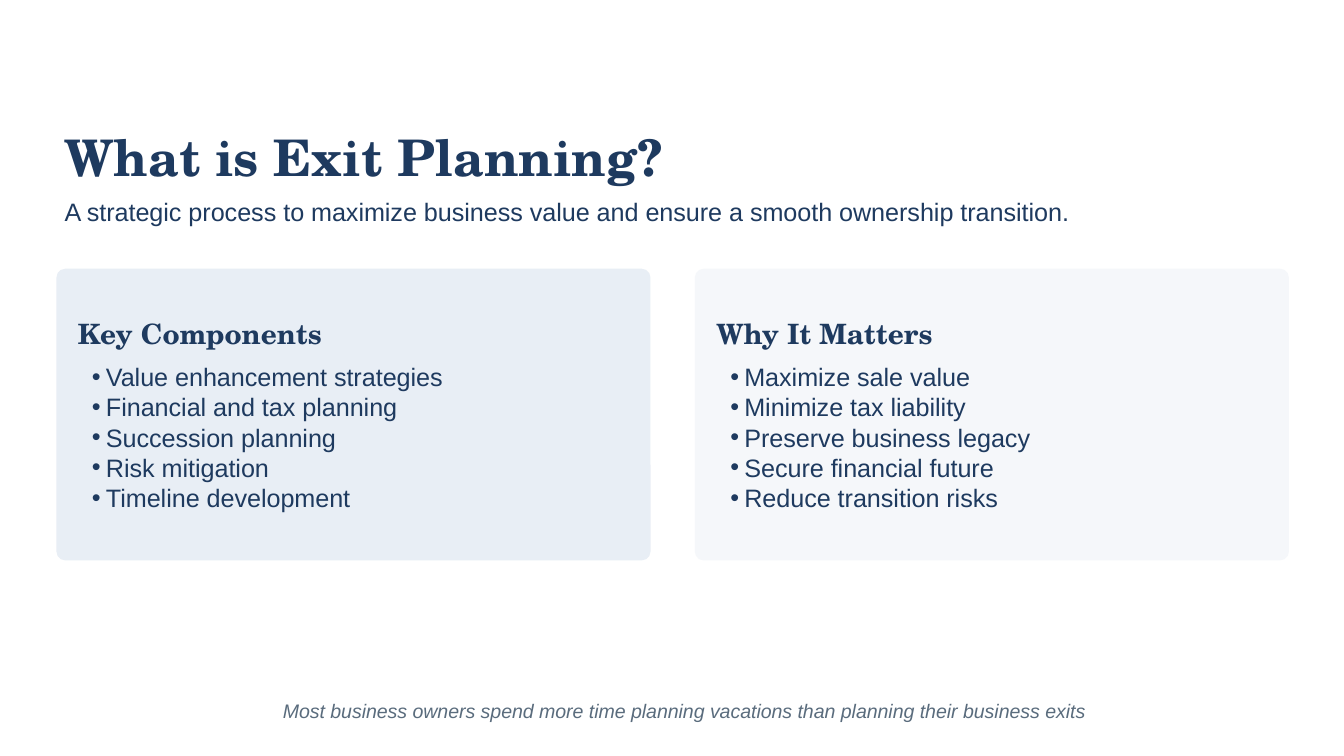
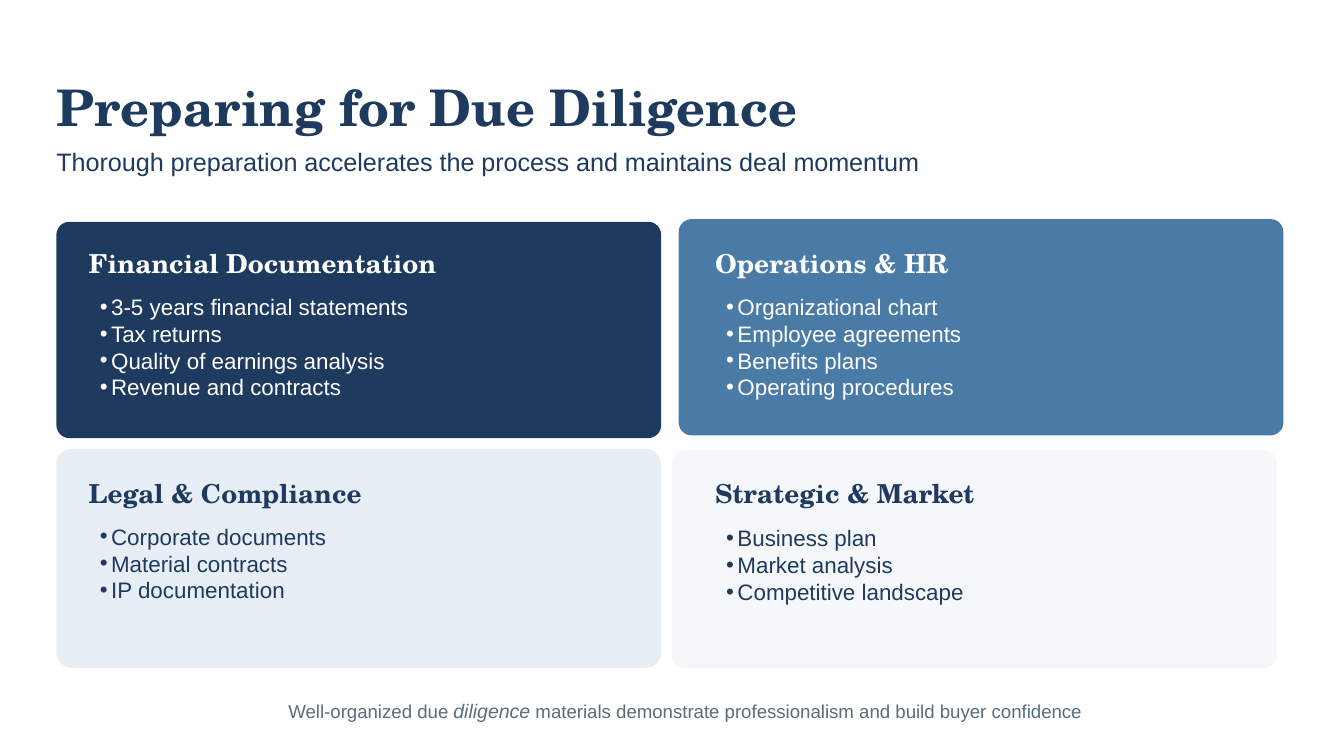
import dataclasses

import pptx
import pptx.dml.color
import pptx.enum.shapes
import pptx.enum.text
import pptx.oxml.ns
import pptx.util
from lxml import etree

Inches = pptx.util.Inches


@dataclasses.dataclass(frozen=True)
class Theme:
    """Colours, fonts and type sizes of the deck."""
    navy: str = "1E3A5F"
    blue: str = "4A7BA7"
    mist: str = "E8EEF5"
    pale: str = "F5F7FA"
    white: str = "FFFFFF"
    grey: str = "5A6C7D"
    serif: str = "TeX Gyre Schola"
    sans: str = "Arial"
    title_size: float = 27
    subtitle_size: float = 13.5
    footer_size: float = 10.5
    small_footer_size: float = 10


THEME = Theme()


@dataclasses.dataclass(frozen=True)
class Box:
    """A rectangle in inches."""
    left: float
    top: float
    width: float
    height: float

    def inner(self, left, top, width, height):
        """Return a box placed relative to this one."""
        return Box(self.left + left, self.top + top, width, height)

    def lengths(self):
        """Return left, top, width and height as lengths."""
        return [Inches(value) for value in dataclasses.astuple(self)]


@dataclasses.dataclass(frozen=True)
class PanelStyle:
    """Type settings, in points, of a heading with a bulleted list."""
    heading_size: float
    heading_leading: float
    heading_after: float
    list_size: float
    indent: float


@dataclasses.dataclass(frozen=True)
class Panel:
    """A card, with its list box relative to its heading box."""
    card: Box
    radius: float
    fill: str
    ink: str
    heading_box: Box
    heading: str
    list_box: tuple
    items: tuple


WIDE_STYLE = PanelStyle(15, 21, 6, 13.5, 7.5)
GRID_STYLE = PanelStyle(14, 13.5, 4.5, 12, 6)


def set_frame(shape, left_inset=0):
    """Give a text shape plain insets, wrapping and top alignment."""
    frame = shape.text_frame
    frame.margin_left = pptx.util.Pt(left_inset)
    frame.margin_top = frame.margin_right = frame.margin_bottom = 0
    frame.auto_size = pptx.enum.text.MSO_AUTO_SIZE.NONE
    frame.word_wrap = True
    frame.vertical_anchor = pptx.enum.text.MSO_ANCHOR.TOP
    return frame


def add_text_box(slide, box):
    """Add an empty text box and return its frame."""
    return set_frame(slide.shapes.add_textbox(*box.lengths()))


def place_placeholder(placeholder, box, left_inset=0):
    """Move a placeholder to a box, in front of earlier shapes."""
    placeholder.left, placeholder.top, placeholder.width, placeholder.height = box.lengths()
    placeholder.element.getparent().append(placeholder.element)
    return set_frame(placeholder, left_inset)


def format_paragraph(paragraph, leading=1.0, after=0, align=pptx.enum.text.PP_ALIGN.LEFT):
    """Set alignment and spacing of a paragraph."""
    paragraph.alignment = align
    paragraph.line_spacing = leading
    paragraph.space_before = pptx.util.Pt(0)
    paragraph.space_after = pptx.util.Pt(after)


def add_run(paragraph, text, size, color, name=THEME.sans, bold=False, italic=False):
    """Add one formatted run."""
    run = paragraph.add_run()
    run.text = text
    run.font.name = name
    run.font.size = pptx.util.Pt(size)
    run.font.bold = bold
    run.font.italic = italic
    run.font.color.rgb = pptx.dml.color.RGBColor.from_string(color)


def add_bullet(paragraph, indent):
    """Give a paragraph a hanging bullet."""
    properties = paragraph._p.get_or_add_pPr()
    properties.set("marL", str(pptx.util.Pt(indent)))
    properties.set("indent", str(-pptx.util.Pt(indent)))
    bullet = etree.SubElement(properties, pptx.oxml.ns.qn("a:buChar"))
    bullet.set("char", "•")


def add_header(slide, box, title_width, title, subtitle):
    """Fill the title and add the subtitle beneath it."""
    frame = place_placeholder(slide.shapes.title, box.inner(0, 0, title_width, 0.42))
    paragraph = frame.paragraphs[0]
    format_paragraph(paragraph, pptx.util.Pt(30), 6)
    add_run(paragraph, title, THEME.title_size, THEME.navy, THEME.serif, bold=True)
    paragraph = add_text_box(slide, box.inner(0, 0.42, box.width, 0.29)).paragraphs[0]
    format_paragraph(paragraph, pptx.util.Pt(21), 9)
    add_run(paragraph, subtitle, THEME.subtitle_size, THEME.navy)


def add_card(slide, box, radius, fill):
    """Add a plain rounded card."""
    card = slide.shapes.add_shape(
        pptx.enum.shapes.MSO_SHAPE.ROUNDED_RECTANGLE, *box.lengths())
    card.adjustments[0] = radius
    card.shadow.inherit = False
    card.fill.solid()
    card.fill.fore_color.rgb = pptx.dml.color.RGBColor.from_string(fill)
    card.line.fill.background()


def add_panel(slide, placeholder, panel, style):
    """Add a card with its heading and bulleted list."""
    add_card(slide, panel.card, panel.radius, panel.fill)
    heading = add_text_box(slide, panel.heading_box).paragraphs[0]
    format_paragraph(heading, pptx.util.Pt(style.heading_leading), style.heading_after)
    add_run(heading, panel.heading, style.heading_size, panel.ink, THEME.serif, bold=True)
    frame = place_placeholder(
        placeholder, panel.heading_box.inner(*panel.list_box), style.indent)
    for index, item in enumerate(panel.items):
        paragraph = frame.add_paragraph() if index else frame.paragraphs[0]
        add_bullet(paragraph, style.indent)
        format_paragraph(paragraph)
        add_run(paragraph, item, style.list_size, panel.ink)


def add_panels(slide, panels, style):
    """Pair the body placeholders with the panels."""
    bodies = [shape for shape in slide.placeholders if shape.placeholder_format.idx > 0]
    for placeholder, panel in zip(bodies, panels):
        add_panel(slide, placeholder, panel, style)


def add_footer(slide, runs):
    """Add the centred closing remark from text, size and italic triples."""
    paragraph = add_text_box(slide, Box(0.42, 5.18, 9.35, 0.19)).paragraphs[0]
    format_paragraph(paragraph, pptx.util.Pt(14), align=pptx.enum.text.PP_ALIGN.CENTER)
    for text, size, italic in runs:
        add_run(paragraph, text, size, THEME.grey, italic=italic)


def add_definition_slide(presentation):
    """Build the slide with two wide panels."""
    slide = presentation.slides.add_slide(
        presentation.slide_layouts.get_by_name("Two Content"))
    add_header(slide, Box(0.48, 0.97, 9.35, 0.71), 4.69, "What is Exit Planning?",
               "A strategic process to maximize business value and ensure a smooth "
               "ownership transition.")
    contents = (
        (THEME.mist, "Key Components",
         ("Value enhancement strategies", "Financial and tax planning",
          "Succession planning", "Risk mitigation", "Timeline development")),
        (THEME.pale, "Why It Matters",
         ("Maximize sale value", "Minimize tax liability", "Preserve business legacy",
          "Secure financial future", "Reduce transition risks")),
    )
    panels = []
    for column, (fill, heading, items) in enumerate(contents):
        card = Box(0.42 + 4.75 * column, 2, 4.42, 2.17)
        panels.append(Panel(card, 0.03, fill, THEME.navy,
                            card.inner(0.16, 0.31, 4.17, 0.29), heading,
                            (0, 0.38, 4.08, 1.21), items))
    add_panels(slide, panels, WIDE_STYLE)
    add_footer(slide, [("Most business owners spend more time planning vacations than "
                        "planning their business exits", THEME.footer_size, True)])


def add_diligence_slide(presentation):
    """Build the slide with a grid of four panels."""
    slide = presentation.slides.add_slide(
        presentation.slide_layouts.get_by_name("Comparison"))
    add_header(slide, Box(0.42, 0.6, 9.35, 0.71), 7.13, "Preparing for Due Diligence",
               "Thorough preparation accelerates the process and maintains deal momentum")
    contents = (
        (Box(0.42, 1.65, 4.5, 1.61), 0.06, THEME.navy, THEME.white,
         "Financial Documentation", (0, 0.29, 3.5, 0.95),
         ("3-5 years financial statements", "Tax returns",
          "Quality of earnings analysis", "Revenue and contracts")),
        (Box(5.05, 1.63, 4.5, 1.61), 0.06, THEME.blue, THEME.white,
         "Operations & HR", (0, 0.29, 2.9, 0.95),
         ("Organizational chart", "Employee agreements", "Benefits plans",
          "Operating procedures")),
        (Box(0.42, 3.34, 4.5, 1.63), 0.07, THEME.mist, THEME.navy,
         "Legal & Compliance", (0, 0.29, 2.85, 0.75),
         ("Corporate documents", "Material contracts", "IP documentation")),
        (Box(5, 3.35, 4.5, 1.62), 0.06, THEME.pale, THEME.navy,
         "Strategic & Market", (0, 0.3, 3.32, 0.75),
         ("Business plan", "Market analysis", "Competitive landscape")),
    )
    panels = []
    for index, (card, radius, fill, ink, heading, list_box, items) in enumerate(contents):
        row, column = divmod(index, 2)
        heading_box = Box(0.66 + 4.66 * column, 1.89 + 1.71 * row, 3.08, 0.19)
        panels.append(Panel(card, radius, fill, ink, heading_box, heading, list_box, items))
    add_panels(slide, panels, GRID_STYLE)
    add_footer(slide, [
        ("Well-organized due ", THEME.small_footer_size, False),
        ("diligence", THEME.footer_size, True),
        (" materials demonstrate professionalism and build buyer confidence",
         THEME.small_footer_size, False),
    ])


def main():
    """Build and save the presentation."""
    presentation = pptx.Presentation()
    presentation.slide_width = Inches(10)
    presentation.slide_height = Inches(10 * 9 / 16)
    add_definition_slide(presentation)
    add_diligence_slide(presentation)
    presentation.save("out.pptx")


if __name__ == "__main__":
    main()
